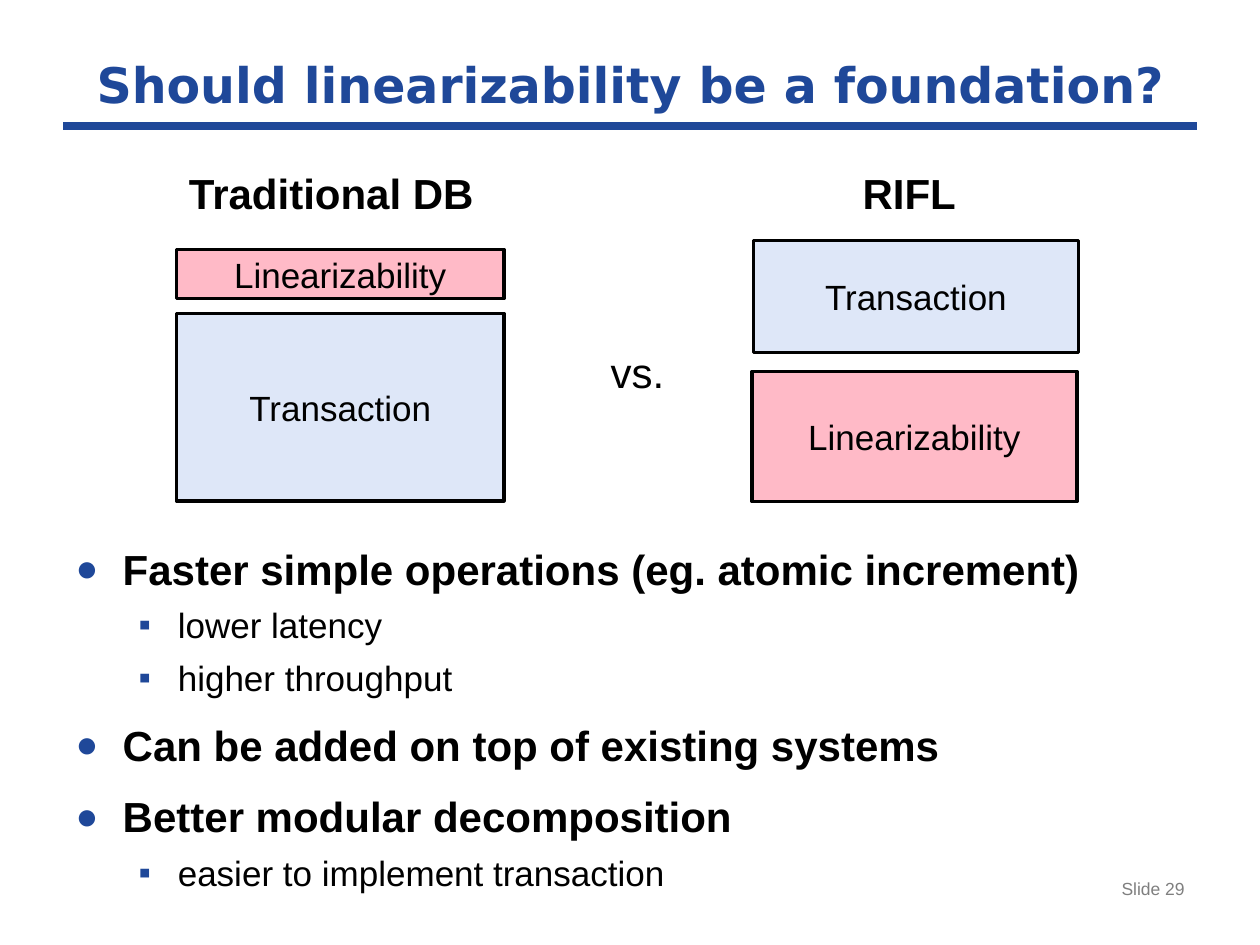
import pptx
import pptx.dml.color
import pptx.enum.shapes
import pptx.enum.text
import pptx.oxml
import pptx.oxml.ns
import pptx.util
from lxml import etree

Cm, Pt = pptx.util.Cm, pptx.util.Pt
RGB = pptx.dml.color.RGBColor.from_string
ALIGN = pptx.enum.text.PP_ALIGN
ANCHOR = pptx.enum.text.MSO_ANCHOR
COLORS = {
    "accent": "1F4899",
    "text": "000000",
    "footer": "7F7F7F",
    "Transaction": "DEE7F8",
    "Linearizability": "FFBAC7",
}


def place(box, left, top, width, height):
    box.left, box.top, box.width, box.height = map(Cm, (left, top, width, height))


def style(para, size, color="text", bold=False, align=ALIGN.LEFT, face="Arial"):
    para.alignment = align
    para.font.name = face
    para.font.size = Pt(size)
    para.font.bold = bold
    para.font.color.rgb = RGB(COLORS[color])


deck = pptx.Presentation()
deck.slide_width, deck.slide_height = Cm(25.4), Cm(19.05)
page = deck.slides.add_slide(deck.slide_layouts[1])

rule = page.shapes.add_connector(
    pptx.enum.shapes.MSO_CONNECTOR.STRAIGHT, Cm(1.27), Cm(2.54), Cm(24.13), Cm(2.54))
rule.line.color.rgb = RGB(COLORS["accent"])
rule.line.width = Pt(4.5)
etree.SubElement(rule.element.spPr, pptx.oxml.ns.qn("a:effectLst"))

title = page.shapes.title
place(title, 0, 0.84, 25.4, 1.7)
title.text_frame.text = "Should linearizability be a foundation?"
title.text_frame.auto_size = pptx.enum.text.MSO_AUTO_SIZE.NONE
title.text_frame.vertical_anchor = ANCHOR.MIDDLE
style(title.text_frame.paragraphs[0], 28, "accent", True, ALIGN.CENTER, "DejaVu Sans")

points = [
    (0, "Faster simple operations (eg. atomic increment)"),
    (1, "lower latency"),
    (1, "higher throughput"),
    (0, "Can be added on top of existing systems"),
    (0, "Better modular decomposition"),
    (1, "easier to implement transaction"),
]
levels = [
    dict(size=24, bold=True, before=12, margin=0.95, hang=0.95, mark="●", scale=90),
    dict(size=20, bold=False, before=6, margin=2.06, hang=0.79, mark="▪", scale=100),
]
body = page.placeholders[1]
place(body, 1.27, 10.82, 22.86, 5.66)
body.text_frame.text = "\n".join(text for level, text in points)
body.text_frame.auto_size = pptx.enum.text.MSO_AUTO_SIZE.NONE
for para, (level, text) in zip(body.text_frame.paragraphs, points):
    look = levels[level]
    para.level = level
    para.space_before = Pt(look["before"])
    props = para._p.get_or_add_pPr()
    props.set("marL", str(Cm(look["margin"])))
    props.set("indent", str(-Cm(look["hang"])))
    for bullet in (
        f'<a:buClr {pptx.oxml.ns.nsdecls("a")}><a:srgbClr val="{COLORS["accent"]}"/></a:buClr>',
        f'<a:buSzPct {pptx.oxml.ns.nsdecls("a")} val="{look["scale"] * 1000}"/>',
        f'<a:buFont {pptx.oxml.ns.nsdecls("a")} typeface="Arial"/>',
        f'<a:buChar {pptx.oxml.ns.nsdecls("a")} char="{look["mark"]}"/>',
    ):
        props.append(pptx.oxml.parse_xml(bullet))
    style(para, look["size"], bold=look["bold"])

layers = [
    ("Transaction", 15.19, 4.85, 6.55, 2.26),
    ("Linearizability", 15.16, 7.49, 6.55, 2.62),
    ("Transaction", 3.56, 6.32, 6.6, 3.78),
    ("Linearizability", 3.56, 5.03, 6.6, 0.99),
]
for name, *bounds in layers:
    layer = page.shapes.add_shape(
        pptx.enum.shapes.MSO_SHAPE.RECTANGLE, *map(Cm, bounds))
    layer.shadow.inherit = False
    layer.fill.solid()
    layer.fill.fore_color.rgb = RGB(COLORS[name])
    layer.line.color.rgb = RGB(COLORS["text"])
    layer.line.width = Pt(2)
    layer.text_frame.text = name
    layer.text_frame.vertical_anchor = ANCHOR.MIDDLE
    style(layer.text_frame.paragraphs[0], 20, align=ALIGN.CENTER)

labels = [
    ("Traditional DB", (3.56, 3.25, 7.19, 1.27), dict(size=24, bold=True)),
    ("RIFL", (17.14, 3.25, 5.44, 1.27), dict(size=24, bold=True)),
    ("vs.", (12.06, 6.86, 1.7, 1.27), dict(size=24)),
    ("Slide 29", (18.21, 17.58, 5.92, 1.09),
     dict(size=10, color="footer", align=ALIGN.RIGHT)),
]
for text, bounds, look in labels:
    label = page.shapes.add_textbox(*map(Cm, bounds))
    label.text_frame.word_wrap = True
    label.text_frame.text = text
    style(label.text_frame.paragraphs[0], **look)

deck.save("out.pptx")
